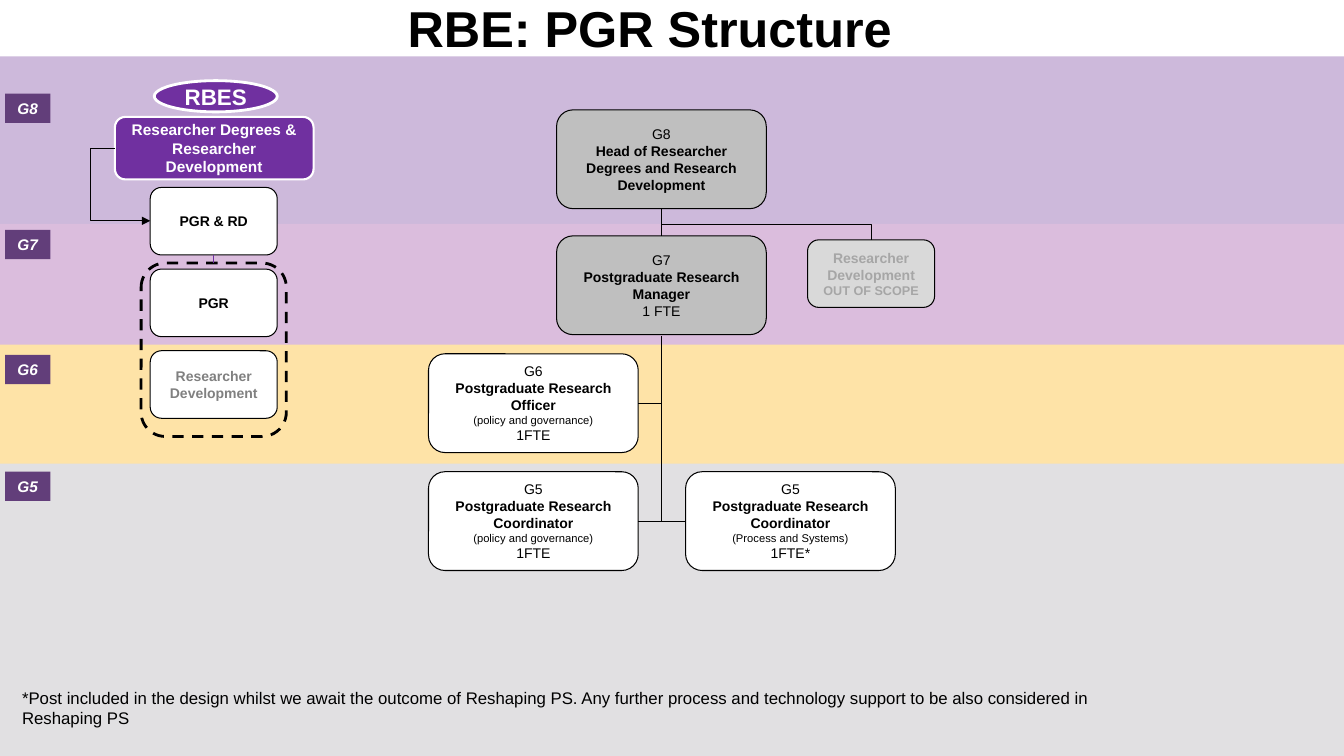
from lxml import etree
from pptx import Presentation
from pptx.dml.color import RGBColor
from pptx.enum.dml import MSO_LINE
from pptx.enum.shapes import MSO_CONNECTOR, MSO_SHAPE
from pptx.enum.text import MSO_ANCHOR, PP_ALIGN
from pptx.oxml.ns import qn
from pptx.util import Inches, Pt

RECTANGLE, ROUNDED, OVAL = MSO_SHAPE.RECTANGLE, MSO_SHAPE.ROUNDED_RECTANGLE, MSO_SHAPE.OVAL
STRAIGHT, ELBOW = MSO_CONNECTOR.STRAIGHT, MSO_CONNECTOR.ELBOW
LEFT, CENTER = PP_ALIGN.LEFT, PP_ALIGN.CENTER
TOP, MIDDLE = MSO_ANCHOR.TOP, MSO_ANCHOR.MIDDLE
BLACK, WHITE, PURPLE, GREY = "000000", "FFFFFF", "7030A0", "BFBFBF"
TITLE_ONLY = 5
hex_color = RGBColor.from_string

presentation = Presentation()
presentation.slide_width, presentation.slide_height = Inches(13.33), Inches(7.5)
slide = presentation.slides.add_slide(presentation.slide_layouts[TITLE_ONLY])


def write_text(shape, *lines, size=10, bold=False, italic=False, color=BLACK,
               align=CENTER, anchor=MIDDLE, spacing=1.0):
    """Each line is a text, or a (text, size, bold) tuple that overrides the format."""
    frame = shape.text_frame
    frame.word_wrap, frame.vertical_anchor = True, anchor
    for index, line in enumerate(lines):
        text, line_size, line_bold = (line, size, bold) if isinstance(line, str) else line
        paragraph = frame.add_paragraph() if index else frame.paragraphs[0]
        paragraph.alignment, paragraph.line_spacing = align, spacing
        run = paragraph.add_run()
        run.text = text
        font = run.font
        font.name, font.size, font.bold, font.italic = "Arial", Pt(line_size), line_bold, italic
        font.color.rgb = hex_color(color)


def add_box(kind, left, top, width, height, *lines, fill=WHITE, outline=BLACK,
            weight=0.75, **text_format):
    shape = slide.shapes.add_shape(kind, Inches(left), Inches(top), Inches(width), Inches(height))
    shape.shadow.inherit = False
    if fill:
        shape.fill.solid()
        shape.fill.fore_color.rgb = hex_color(fill)
    else:
        shape.fill.background()
    if outline:
        shape.line.color.rgb = hex_color(outline)
        shape.line.width = Pt(weight)
    else:
        shape.line.fill.background()
    write_text(shape, *lines, **text_format)
    return shape


# Grade bands, each running down to the next, with their labels
bands = [("G8", 0.56, 0.93, "CDB9DB"), ("G7", 2.22, 2.28, "DBBDDD"),
         ("G6", 3.42, 3.52, "FEE3A7"), ("G5", 4.6, 4.68, "E1E0E2")]
for grade, band_top, label_top, color in bands:
    add_box(RECTANGLE, 0, band_top, 13.33, 7.5 - band_top, fill=color, outline=None)
for grade, band_top, label_top, color in bands:
    add_box(RECTANGLE, 0.05, label_top, 0.45, 0.29, grade, fill="623E7A", outline=None,
            size=11, bold=True, italic=True, color=WHITE)

# Title and footnote
title = slide.shapes.title
title.left, title.top, title.width, title.height = (Inches(n) for n in (1.65, 0.01, 9.59, 0.6))
write_text(title, "RBE: PGR Structure", size=36, bold=True, spacing=0.9)
footnote = slide.shapes.add_textbox(Inches(0.12), Inches(6.77), Inches(10.92), Inches(0.5))
write_text(footnote, "*Post included in the design whilst we await the outcome of Reshaping PS. "
           "Any further process and technology support to be also considered in Reshaping PS",
           size=12, align=LEFT, anchor=TOP)

# Posts in the organisation chart
posts = [
    (5.52, 1.09, GREY, "G8", ["Head of Researcher Degrees and Research Development"], None, None),
    (5.52, 2.34, GREY, "G7", ["Postgraduate Research Manager"], None, "1 FTE"),
    (4.25, 3.51, WHITE, "G6", ["Postgraduate Research Officer"], "(policy and governance)", "1FTE"),
    (4.25, 4.68, WHITE, "G5", ["Postgraduate Research Coordinator"],
     "(policy and governance)", "1FTE"),
    (6.8, 4.68, WHITE, "G5", ["Postgraduate Research", "Coordinator"],
     "(Process and Systems)", "1FTE*"),
]
post_boxes = []
for left, top, fill, grade, roles, remit, staffing in posts:
    lines = [grade] + [(role, 10, True) for role in roles]
    if remit:
        lines.append((remit, 8, False))
    if staffing:
        lines.append(staffing)
    post_boxes.append(add_box(ROUNDED, left, top, 2.08, 0.98, *lines, fill=fill))
head, manager = post_boxes[:2]
add_box(ROUNDED, 8.01, 2.38, 1.26, 0.67, "Researcher Development", ("OUT OF SCOPE", 9, True),
        fill="D9D9D9", bold=True, color="A6A6A6")

# Team overview on the left
add_box(ROUNDED, 1.14, 1.16, 1.97, 0.62, "Researcher Degrees & Researcher Development",
        fill=PURPLE, outline=WHITE, weight=1.5, size=11, bold=True, color=WHITE)
badge = add_box(OVAL, 1.53, 0.8, 1.22, 0.31, "RBES", fill=PURPLE, outline=WHITE, weight=2,
                size=16, bold=True, color=WHITE)
badge.text_frame.margin_left = badge.text_frame.margin_right = 0
badge.text_frame.margin_top = badge.text_frame.margin_bottom = 0
teams = [("PGR & RD", BLACK), ("PGR", BLACK), ("Researcher Development", "808080")]
team_boxes = [add_box(ROUNDED, 1.49, 1.86 + 0.81 * row, 1.26, 0.67, name, bold=True, color=color)
              for row, (name, color) in enumerate(teams)]
team_outline = add_box(ROUNDED, 1.4, 2.61, 1.44, 1.72, fill=None, weight=2)
team_outline.line.dash_style = MSO_LINE.DASH

# Connectors: one-bend elbows leave sideways and meet the trunk below the manager
trunk = 6.56
links = [
    (STRAIGHT, (trunk, 2.07), (trunk, 2.34), BLACK, (head, manager)),
    (STRAIGHT, (2.12, 2.53), (2.12, 2.61), PURPLE, (team_boxes[0], team_outline)),
    (ELBOW, (6.33, 4), (trunk, 3.33), BLACK, None),
    (ELBOW, (6.33, 5.17), (trunk, 3.33), BLACK, None),
    (ELBOW, (6.8, 5.17), (trunk, 3.33), BLACK, None),
    (ELBOW, (trunk, 2.23), (8.64, 2.38), BLACK, None),
    (ELBOW, (1.14, 1.47), (1.49, 2.19), BLACK, None),
]
for kind, begin, end, color, joined in links:
    connector = slide.shapes.add_connector(kind, *(Inches(n) for n in begin + end))
    connector.line.color.rgb = hex_color(color)
    connector.line.width = Pt(0.75)
    properties = connector._element.spPr
    etree.SubElement(properties, qn("a:effectLst"))
    if joined:
        connector.begin_connect(joined[0], 2)
        connector.end_connect(joined[1], 0)
    if kind == ELBOW:
        properties.find(qn("a:prstGeom")).set("prst", "bentConnector2")

# The last link loops out to the left and ends in an arrowhead
geometry = properties.find(qn("a:prstGeom"))
geometry.set("prst", "bentConnector3")
adjustments = geometry.find(qn("a:avLst"))
if adjustments is None:
    adjustments = etree.SubElement(geometry, qn("a:avLst"))
etree.SubElement(adjustments, qn("a:gd"), name="adj1", fmla="val -70600")
etree.SubElement(properties.find(qn("a:ln")), qn("a:tailEnd"), type="triangle")

presentation.save("out.pptx")
